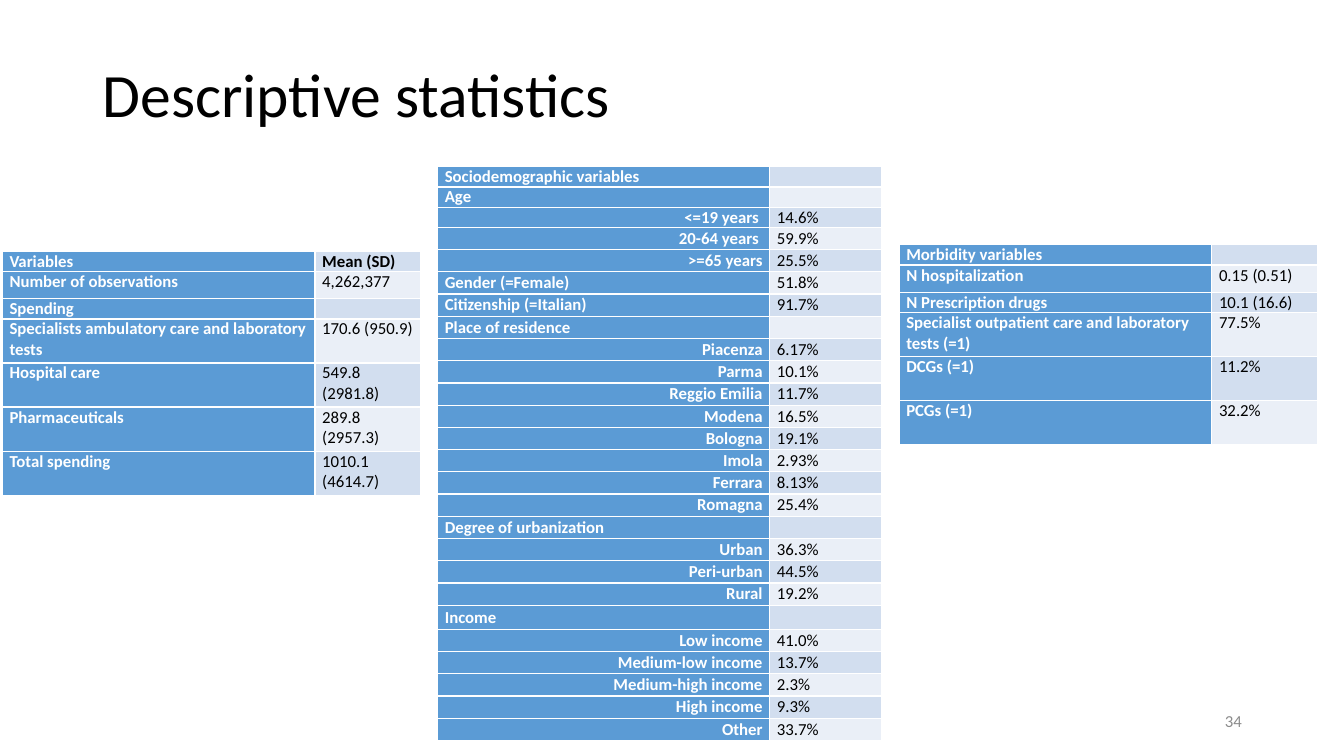
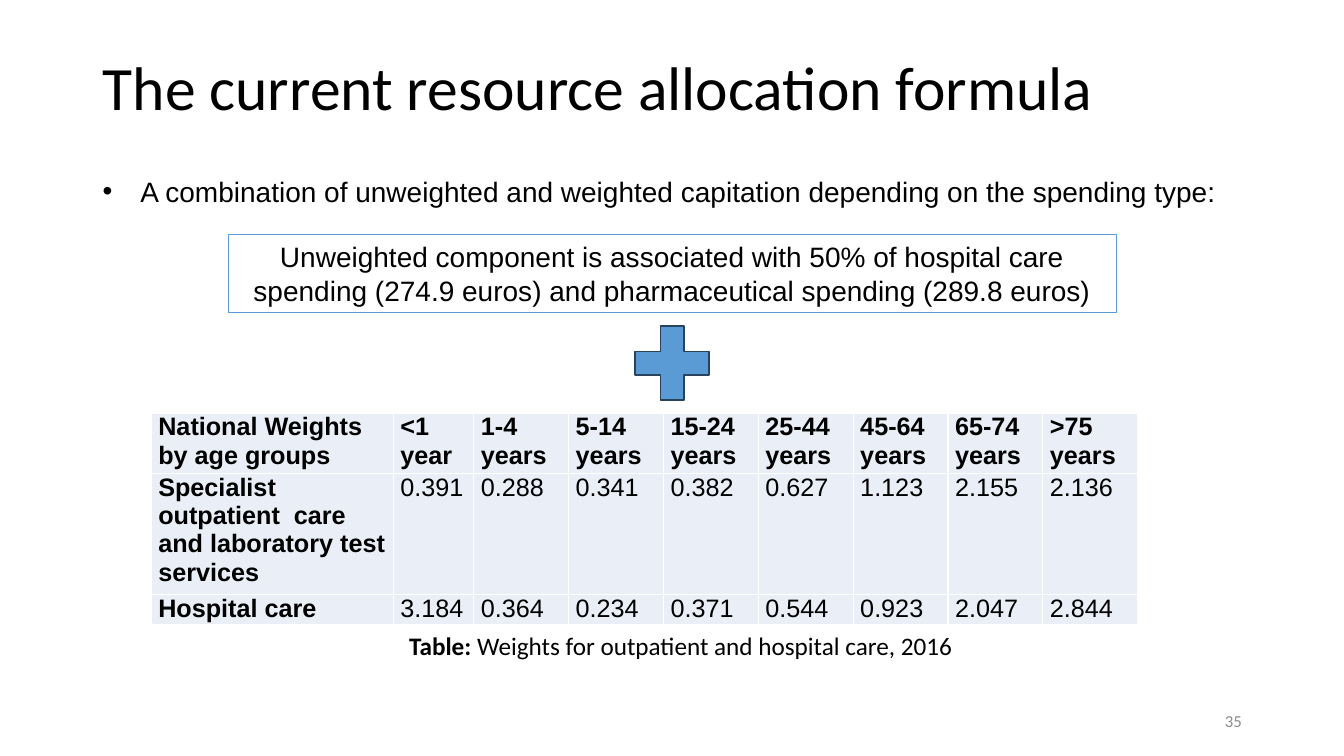
import pptx
import pptx.dml.color
import pptx.enum.shapes
import pptx.enum.text
import pptx.oxml.ns
import pptx.util
from lxml import etree

Cm, Pt = pptx.util.Cm, pptx.util.Pt
RGBColor = pptx.dml.color.RGBColor
ALIGN = pptx.enum.text.PP_ALIGN
ANCHOR = pptx.enum.text.MSO_ANCHOR
SHAPE = pptx.enum.shapes.MSO_SHAPE
qn = pptx.oxml.ns.qn

# Shared look
BLACK = RGBColor(0x00, 0x00, 0x00)
WHITE = RGBColor(0xFF, 0xFF, 0xFF)
GREY = RGBColor(0x8C, 0x8C, 0x8C)
BLUE = RGBColor(0x5B, 0x9B, 0xD5)
DARK_BLUE = RGBColor(0x28, 0x44, 0x5D)
BANDS = (RGBColor(0xEA, 0xEF, 0xF7), RGBColor(0xD2, 0xDE, 0xEF))
BODY_FONT, TABLE_FONT = "Calibri", "Arial"
LEFT, CONTENT_WIDTH = 2.34, 29.21

# Descriptive statistics: label and value, below an empty header row
HEADER = ("", "")
SPENDING = [
    HEADER,
    ("Variables", "Mean (SD)"),
    ("Number of observations", "4,262,377"),
    ("Spending", ""),
    ("Specialists ambulatory care and laboratory tests", "170.6 (950.9)"),
    ("Hospital care", "549.8 (2981.8)"),
    ("Pharmaceuticals", "289.8 (2957.3)"),
    ("Total spending", "1010.1 (4614.7)"),
]
SOCIODEMOGRAPHIC = [
    HEADER,
    ("Sociodemographic variables", ""),
    ("Age", ""),
    ("<=19 years ", "14.6%"),
    ("20-64 years ", "59.9%"),
    (">=65 years", "25.5%"),
    ("Gender (=Female)", "51.8%"),
    ("Citizenship (=Italian)", "91.7%"),
    ("Place of residence", ""),
    ("Piacenza", "6.17%"),
    ("Parma", "10.1%"),
    ("Reggio Emilia", "11.7%"),
    ("Modena", "16.5%"),
    ("Bologna", "19.1%"),
    ("Imola", "2.93%"),
    ("Ferrara", "8.13%"),
    ("Romagna", "25.4%"),
    ("Degree of urbanization", ""),
    ("Urban", "36.3%"),
    ("Peri-urban", "44.5%"),
    ("Rural", "19.2%"),
    ("Income", ""),
    ("Low income", "41.0%"),
    ("Medium-low income", "13.7%"),
    ("Medium-high income", "2.3%"),
    ("High income", "9.3%"),
    ("Other", "33.7%"),
]
UNGROUPED = ("Gender (=Female)", "Citizenship (=Italian)")
MORBIDITY = [
    HEADER,
    ("Morbidity variables", ""),
    ("N hospitalization", "0.15 (0.51)"),
    ("N Prescription drugs", "10.1 (16.6)"),
    ("Specialist outpatient care and laboratory tests (=1)", "77.5%"),
    ("DCGs (=1)", "11.2%"),
    ("PCGs (=1)", "32.2%"),
]

# National weights
AGE_GROUPS = ["<1 year"] + [
    f"{ages} years"
    for ages in ("1-4", "5-14", "15-24", "25-44", "45-64", "65-74", ">75")
]
WEIGHTS = [
    ["National Weights \nby age groups", *AGE_GROUPS],
    ["Specialist outpatient  care and laboratory test services",
     "0.391", "0.288", "0.341", "0.382", "0.627", "1.123", "2.155", "2.136"],
    ["Hospital care",
     "3.184", "0.364", "0.234", "0.371", "0.544", "0.923", "2.047", "2.844"],
]


def write(frame, text, *, size, font=BODY_FONT, colour=BLACK, bold=False,
          lead="", align=ALIGN.LEFT, spacing=None, bullet=None):
    """Fill a frame with one paragraph; lead is an opening in bold."""
    frame.word_wrap = True
    para = frame.paragraphs[0]
    para.alignment = align
    if spacing:
        para.line_spacing = spacing
    if bullet:
        properties = para._p.get_or_add_pPr()
        properties.set("marL", str(Cm(0.95)))
        properties.set("indent", str(-Cm(0.95)))
        etree.SubElement(properties, qn("a:buFont"), typeface=TABLE_FONT)
        etree.SubElement(properties, qn("a:buChar"), char=bullet)
    if not text:
        # An empty cell keeps the height of its text size
        etree.SubElement(para._p, qn("a:endParaRPr"), sz=str(size * 100))
        return
    pieces = [(lead, True)] if lead else []
    pieces += [(line, bold) for line in text.split("\n")]
    for number, (words, heavy) in enumerate(pieces):
        if number and not lead:
            para.add_line_break()
        span = para.add_run()
        span.text = words
        span.font.size = Pt(size)
        span.font.name = font
        span.font.bold = heavy
        span.font.color.rgb = colour


def add_text(page, text, left, top, width, height, *, anchor=ANCHOR.TOP,
             **style):
    box = page.shapes.add_textbox(Cm(left), Cm(top), Cm(width), Cm(height))
    box.text_frame.vertical_anchor = anchor
    write(box.text_frame, text, **style)


def set_fill(target, colour):
    if colour is None:
        target.fill.background()
    else:
        target.fill.solid()
        target.fill.fore_color.rgb = colour


def add_shape(page, kind, left, top, width, height, *, fill, line, weight):
    shape = page.shapes.add_shape(
        kind, Cm(left), Cm(top), Cm(width), Cm(height))
    shape.shadow.inherit = False
    set_fill(shape, fill)
    shape.line.color.rgb = line
    shape.line.width = Pt(weight)
    return shape


def set_borders(cell):
    """Give a cell thin white borders on all sides."""
    properties = cell._tc.get_or_add_tcPr()
    for place, side in enumerate(("lnL", "lnR", "lnT", "lnB")):
        line = etree.Element(qn(f"a:{side}"), w=str(Pt(1)))
        fill = etree.SubElement(line, qn("a:solidFill"))
        etree.SubElement(fill, qn("a:srgbClr"), val=str(WHITE))
        properties.insert(place, line)


def add_table(page, rows, left, top, widths, heights, style_cell):
    """style_cell(row, column, text) gives the fill, anchor and text format."""
    table = page.shapes.add_table(
        len(rows), len(widths), Cm(left), Cm(top),
        Cm(sum(widths)), Cm(sum(heights))).table
    table.first_row = table.horz_banding = False
    for column, width in zip(table.columns, widths):
        column.width = Cm(width)
    for row, height in zip(table.rows, heights):
        row.height = Cm(height)
    for r, texts in enumerate(rows):
        for c, text in enumerate(texts):
            cell = table.cell(r, c)
            fill, anchor, style = style_cell(r, c, text)
            cell.margin_left = cell.margin_right = Cm(0.18)
            cell.margin_top = cell.margin_bottom = 0
            cell.vertical_anchor = anchor
            set_fill(cell, fill)
            set_borders(cell)
            write(cell.text_frame, text, **style)


def add_statistics(page, rows, left, top, widths, heights, grouped=()):
    """Blue labels, right-aligned if grouped, beside banded values."""
    anchor = ANCHOR.MIDDLE if grouped else ANCHOR.TOP

    def style_cell(row, column, text):
        if row == 0:
            return None, anchor, dict(size=12)
        if column == 0:
            align = ALIGN.RIGHT if text in grouped else ALIGN.LEFT
            return BLUE, anchor, dict(
                size=12, colour=WHITE, bold=True, align=align)
        return BANDS[row % 2], anchor, dict(size=12, bold=row == 1)

    add_table(page, rows, left, top, widths, heights, style_cell)


def style_weight(row, column, text):
    return BANDS[0], ANCHOR.TOP, dict(
        size=18, font=TABLE_FONT, bold=row == 0 or column == 0)


def add_page(deck, title, number, title_top):
    page = deck.slides.add_slide(deck.slide_layouts[6])
    add_text(page, title, LEFT, title_top, CONTENT_WIDTH, 3.68,
             anchor=ANCHOR.MIDDLE, size=44, spacing=0.9)
    add_text(page, number, 23.93, 17.65, 7.62, 1.02, anchor=ANCHOR.MIDDLE,
             size=12, colour=GREY, align=ALIGN.RIGHT)
    return page


def build_statistics(deck):
    page = add_page(deck, "Descriptive statistics", "34", 0.61)
    side_widths = [7.88, 2.67]
    side_heights = [1.85, 0.5, 0.69, 0.5] + [1.11] * 4
    grouped = [label for label, value in SOCIODEMOGRAPHIC
               if value and label not in UNGROUPED]
    add_statistics(page, SPENDING, 0.06, 4.48, side_widths, side_heights)
    add_statistics(page, SOCIODEMOGRAPHIC, 11.03, 3.15, [8.37, 2.83],
                   [1.05] + [0.51] * 3 + [0.56] * 17 + [0.61] + [0.56] * 5,
                   grouped)
    add_statistics(page, MORBIDITY, 22.66, 4.32, side_widths,
                   side_heights[:len(MORBIDITY)])


def build_formula(deck):
    page = add_page(
        deck, "The current resource allocation formula", "35", 0.43)
    add_text(page, "A combination of unweighted and weighted capitation "
             "depending on the spending type:", LEFT, 4.27, CONTENT_WIDTH,
             1.12, size=20, font=TABLE_FONT, bullet="•")

    # Unweighted component plus weighted component
    box = add_shape(page, SHAPE.RECTANGLE, 5.75, 5.91, 22.38, 1.96,
                    fill=None, line=BLUE, weight=0.75)
    write(box.text_frame, "Unweighted component is associated with 50% of "
          "hospital care spending (274.9 euros) and pharmaceutical spending "
          "(289.8 euros)", size=20, font=TABLE_FONT, align=ALIGN.CENTER)
    add_shape(page, SHAPE.MATH_PLUS, 15.67, 7.88, 2.54, 2.54,
              fill=BLUE, line=DARK_BLUE, weight=1)

    # Weights, in rows that grow with their text, and caption
    add_table(page, WEIGHTS, 3.81, 10.41, [6.1, 2.03] + [2.39] * 7,
              [0.89, 0.79, 0.64], style_weight)
    add_text(page, "Weights for outpatient and hospital care, 2016",
             10.06, 15.75, 14.94, 1.02, size=18, lead="Table: ")


def main():
    deck = pptx.Presentation()
    deck.slide_width, deck.slide_height = Cm(33.87), Cm(19.05)
    build_statistics(deck)
    build_formula(deck)
    deck.save("out.pptx")


if __name__ == "__main__":
    main()
